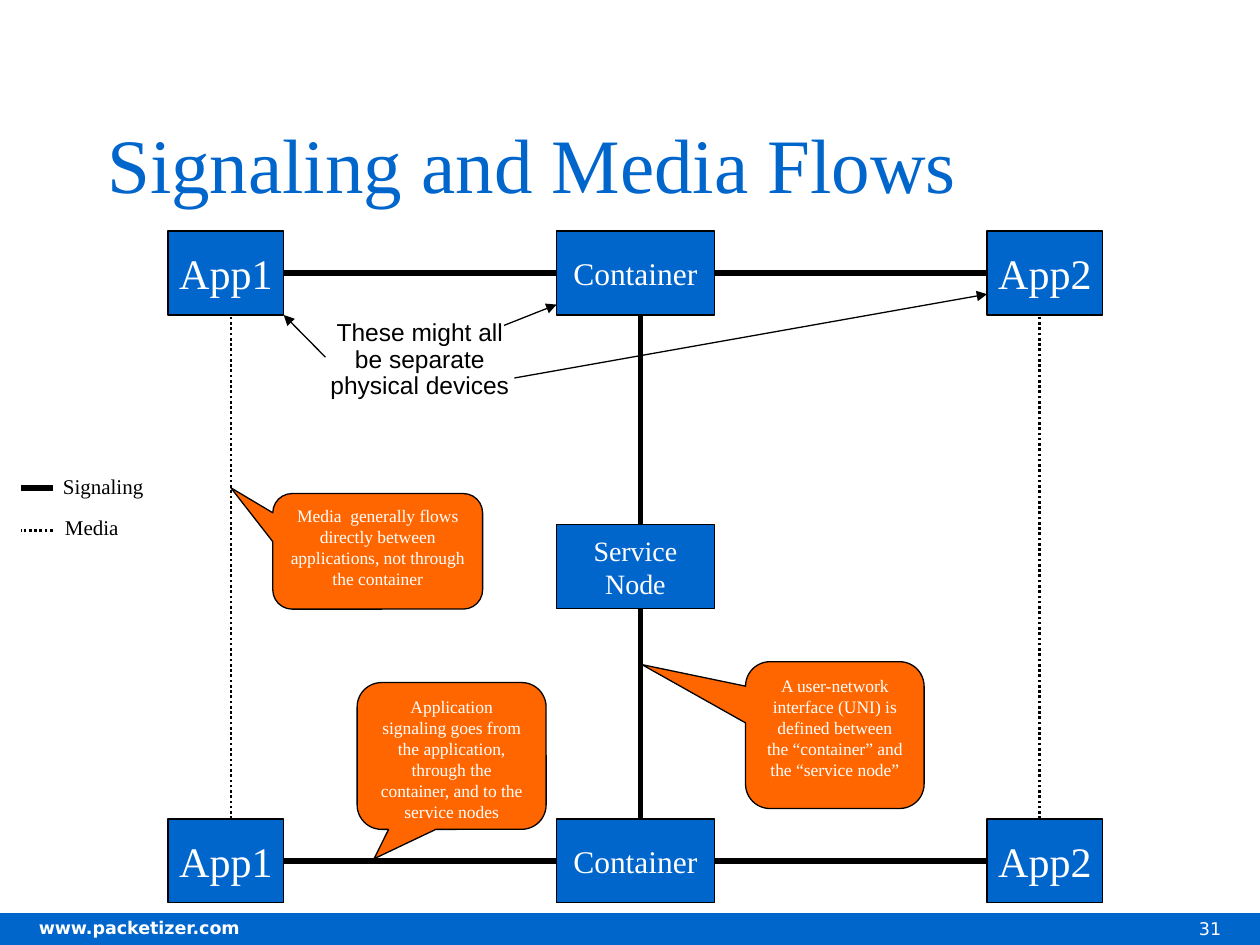
from lxml import etree
from pptx import Presentation
from pptx import util as u
from pptx.dml.color import RGBColor
from pptx.enum import dml, shapes, text
from pptx.oxml import ns

Cm, Pt = u.Cm, u.Pt
COLORS = {"blue": "0066CC", "orange": "FF6600", "black": "000000", "white": "FFFFFF"}
SERIF, SANS, FOOTER = "Times New Roman", "Arial", "DejaVu Sans"
CENTER, LEFT, RIGHT = text.PP_ALIGN.CENTER, text.PP_ALIGN.LEFT, text.PP_ALIGN.RIGHT


def write(frame, lines, size, color, font=SERIF, align=CENTER, bold=False):
    """Write one paragraph per line, each as a formatted run."""
    for index, line in enumerate(lines.split("\n")):
        paragraph = frame.add_paragraph() if index else frame.paragraphs[0]
        paragraph.alignment = align
        run = paragraph.add_run()
        run.text = line
        run.font.name, run.font.size, run.font.bold = font, Pt(size), bold
        run.font.color.rgb = RGBColor.from_string(COLORS[color])


def add_line(x1, y1, x2, y2, width, dotted=False, arrow=False):
    """Add a black straight line, optionally dotted or with an arrowhead."""
    line = slide.shapes.add_connector(
        shapes.MSO_CONNECTOR.STRAIGHT, Cm(x1), Cm(y1), Cm(x2), Cm(y2))
    line.line.width = Pt(width)
    line.line.color.rgb = RGBColor.from_string(COLORS["black"])
    if dotted:
        line.line.dash_style = dml.MSO_LINE.ROUND_DOT
    if arrow:
        etree.SubElement(line.line._get_or_add_ln(), ns.qn("a:tailEnd"), type="triangle")
    etree.SubElement(line._element.spPr, ns.qn("a:effectLst"))


presentation = Presentation()
presentation.slide_width, presentation.slide_height = Cm(25.4), Cm(19.05)
slide = presentation.slides.add_slide(presentation.slide_layouts[5])

# Title
title = slide.shapes.title
title.left, title.top, title.width, title.height = Cm(1.91), Cm(1.69), Cm(21.59), Cm(3.18)
title.text_frame.vertical_anchor = text.MSO_ANCHOR.MIDDLE
title.text_frame.auto_size = text.MSO_AUTO_SIZE.NONE
write(title.text_frame, "Signaling and Media Flows", 44, "blue", align=LEFT)

# Footer bar
bar = slide.shapes.add_shape(
    shapes.MSO_SHAPE.RECTANGLE, Cm(0), Cm(18.41), Cm(25.4), Cm(0.64))
bar.shadow.inherit = False
bar.fill.solid()
bar.fill.fore_color.rgb = RGBColor.from_string(COLORS["blue"])
bar.line.fill.background()

# Footer, legend and note texts
labels = [
    ("www.packetizer.com", 0, 18.37, 5.08, 0.68, 10, "white", FOOTER, RIGHT, True, True),
    ("31", 23.92, 18.38, 1.27, 0.68, 10, "white", FOOTER, LEFT, False, True),
    ("Signaling", 1.02, 9.42, 2.13, 0.76, 12, "black", SERIF, LEFT, False, False),
    ("Media", 1.06, 10.24, 1.6, 0.76, 12, "black", SERIF, LEFT, False, False),
    ("These might all be separate physical devices", 6.35, 6.35, 4.23, 1.82,
     14, "black", SANS, CENTER, False, True),
]
for words, left, top, width, height, size, color, font, align, bold, wrap in labels:
    label = slide.shapes.add_textbox(Cm(left), Cm(top), Cm(width), Cm(height))
    frame = label.text_frame
    frame.word_wrap = wrap
    frame.auto_size = text.MSO_AUTO_SIZE.SHAPE_TO_FIT_TEXT
    write(frame, words, size, color, font, align, bold)
frame.paragraphs[0].line_spacing = 0.9  # the note, last in the list
frame.margin_top = frame.margin_bottom = Cm(0.11)

# Nodes: two rows of three, and the service node between them
TOP_ROW, MIDDLE_ROW, BOTTOM_ROW = 4.66, 10.58, 16.51
BOX_HEIGHT, APP_WIDTH, CONTAINER_WIDTH = 1.69, 2.33, 3.18
APP1, CONTAINER, APP2 = 3.39, 11.22, 19.9
nodes = [("Service\nNode", CONTAINER, MIDDLE_ROW, CONTAINER_WIDTH, 16)]
for row in (TOP_ROW, BOTTOM_ROW):
    nodes += [("App1", APP1, row, APP_WIDTH, 24),
              ("Container", CONTAINER, row, CONTAINER_WIDTH, 18),
              ("App2", APP2, row, APP_WIDTH, 24)]
    # Signaling along the row
    add_line(APP1 + APP_WIDTH, row + BOX_HEIGHT / 2, CONTAINER, row + BOX_HEIGHT / 2, 3)
    add_line(CONTAINER + CONTAINER_WIDTH, row + BOX_HEIGHT / 2, APP2, row + BOX_HEIGHT / 2, 3)
for words, left, top, width, size in nodes:
    node = slide.shapes.add_shape(
        shapes.MSO_SHAPE.RECTANGLE, Cm(left), Cm(top), Cm(width), Cm(BOX_HEIGHT))
    node.shadow.inherit = False
    node.fill.solid()
    node.fill.fore_color.rgb = RGBColor.from_string(COLORS["blue"])
    node.line.width = Pt(0.75)
    node.line.color.rgb = RGBColor.from_string(COLORS["black"])
    node.text_frame.word_wrap = False
    node.text_frame.vertical_anchor = text.MSO_ANCHOR.MIDDLE
    write(node.text_frame, words, size, "white")

# Signaling between the rows, media between the applications
for upper, lower in ((TOP_ROW, MIDDLE_ROW), (MIDDLE_ROW, BOTTOM_ROW)):
    add_line(12.91, lower, 12.91, upper + BOX_HEIGHT, 3)
for x in (4.66, 20.96):
    add_line(x, BOTTOM_ROW, x, TOP_ROW + BOX_HEIGHT, 1.5, dotted=True)

# Legend keys
add_line(0.42, 9.84, 1.06, 9.84, 3)
add_line(1.06, 10.69, 0.42, 10.69, 1.5, dotted=True)

# Arrows from the note to the devices
for x1, y1, x2, y2 in ((6.56, 7.2, 5.72, 6.35), (10.16, 6.56, 11.22, 6.14),
                       (10.37, 7.62, 19.9, 5.93)):
    add_line(x1, y1, x2, y2, 0.75, arrow=True)

# Callouts
callouts = [
    ("Media  generally flows directly between applications, not through the container",
     5.5, 9.95, 4.23, 2.33, (-0.7, -0.55)),
    ("Application signaling goes from the application, through the container, "
     "and to the service nodes", 7.2, 13.76, 3.81, 2.96, (-0.41, 0.7)),
    ("A user-network interface (UNI) is defined between the “container” and "
     "the “service node”", 15.03, 13.34, 3.6, 2.96, (-1.08, -0.48)),
]
for words, left, top, width, height, pointer in callouts:
    callout = slide.shapes.add_shape(
        shapes.MSO_SHAPE.ROUNDED_RECTANGULAR_CALLOUT, Cm(left), Cm(top), Cm(width), Cm(height))
    callout.adjustments[0], callout.adjustments[1] = pointer
    callout.shadow.inherit = False
    callout.fill.solid()
    callout.fill.fore_color.rgb = RGBColor.from_string(COLORS["orange"])
    callout.line.width = Pt(0.75)
    callout.line.color.rgb = RGBColor.from_string(COLORS["black"])
    callout.text_frame.word_wrap = True
    callout.text_frame.vertical_anchor = text.MSO_ANCHOR.TOP
    write(callout.text_frame, words, 10, "white")

presentation.save("out.pptx")
